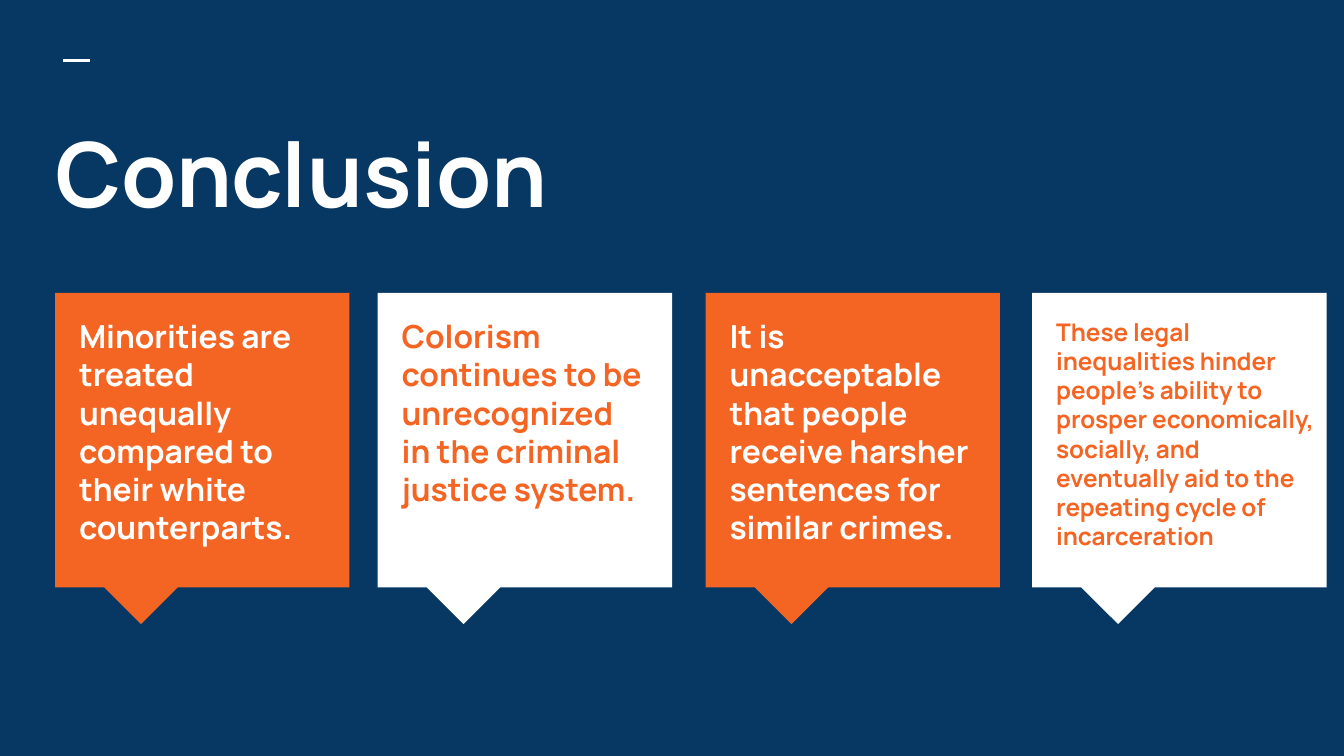
from dataclasses import dataclass

from lxml import etree
from pptx import Presentation
from pptx.dml.color import RGBColor
from pptx.enum.shapes import MSO_CONNECTOR, MSO_SHAPE
from pptx.enum.text import MSO_ANCHOR, MSO_AUTO_SIZE, PP_ALIGN
from pptx.oxml.ns import qn
from pptx.slide import Slide
from pptx.text.text import TextFrame
from pptx.util import Inches, Pt

STRAIGHT = MSO_CONNECTOR.STRAIGHT
CALLOUT = MSO_SHAPE.RECTANGULAR_CALLOUT
TOP = MSO_ANCHOR.TOP
LEFT = PP_ALIGN.LEFT
NO_AUTOFIT = MSO_AUTO_SIZE.NONE

NAVY = RGBColor(0x07, 0x37, 0x63)
ORANGE = RGBColor(0xF4, 0x65, 0x24)
WHITE = RGBColor(0xFF, 0xFF, 0xFF)

FONT = "Manrope"
PAGE_WIDTH = 10
PAGE_HEIGHT = PAGE_WIDTH * 9 / 16
CARD_TOP = 2.18
CARD_SIZE = 2.19
TEXT_OFFSET = 0.08
TEXT_TOP = 2.26
TEXT_HEIGHT = 1.95


@dataclass
class Card:
    left: float
    text: str
    fill: RGBColor
    color: RGBColor
    size: int = 17
    text_width: float = 2


CARDS = [
    Card(0.41, "Minorities are treated unequally compared to their white counterparts.",
         ORANGE, WHITE),
    Card(2.81, "Colorism continues to be unrecognized in the criminal justice system.",
         WHITE, ORANGE),
    Card(5.25, "It is unacceptable that people receive harsher sentences for similar crimes.",
         ORANGE, WHITE),
    Card(7.68, "These legal inequalities hinder people's ability to prosper economically, "
         "socially, and eventually aid to the repeating cycle of incarceration",
         WHITE, ORANGE, size=13, text_width=2.19),
]


def write_text(frame: TextFrame, text: str, size: int, color: RGBColor) -> None:
    frame.word_wrap = True
    frame.auto_size = NO_AUTOFIT
    frame.vertical_anchor = TOP
    frame.margin_left = frame.margin_right = Inches(0.1)
    frame.margin_top = frame.margin_bottom = Inches(0.1)
    para = frame.paragraphs[0]
    para.alignment = LEFT
    span = para.add_run()
    span.text = text
    span.font.name = FONT
    span.font.size = Pt(size)
    span.font.bold = True
    span.font.color.rgb = color


def add_accent(page: Slide) -> None:
    accent = page.shapes.add_connector(
        STRAIGHT, Inches(0.47), Inches(0.45), Inches(0.67), Inches(0.45))
    accent.line.color.rgb = WHITE
    accent.line.width = Pt(1.5)
    etree.SubElement(accent._element.spPr, qn("a:effectLst"))


def add_title(page: Slide) -> None:
    title = page.shapes.title
    title.left, title.top = Inches(0.31), Inches(0.78)
    title.width, title.height = Inches(9.43), Inches(1.12)
    write_text(title.text_frame, "Conclusion", 48, WHITE)


def add_card(page: Slide, card: Card) -> None:
    callout = page.shapes.add_shape(
        CALLOUT, Inches(card.left), Inches(CARD_TOP), Inches(CARD_SIZE), Inches(CARD_SIZE))
    callout.adjustments[0] = -0.208
    callout.adjustments[1] = 0.625
    callout.shadow.inherit = False
    callout.fill.solid()
    callout.fill.fore_color.rgb = card.fill
    callout.line.fill.background()

    box = page.shapes.add_textbox(
        Inches(card.left + TEXT_OFFSET), Inches(TEXT_TOP),
        Inches(card.text_width), Inches(TEXT_HEIGHT))
    write_text(box.text_frame, card.text, card.size, card.color)


def main() -> None:
    deck = Presentation()
    deck.slide_width = Inches(PAGE_WIDTH)
    deck.slide_height = Inches(PAGE_HEIGHT)

    # Title-only page on a navy background
    page = deck.slides.add_slide(deck.slide_layouts[5])
    page.background.fill.solid()
    page.background.fill.fore_color.rgb = NAVY

    # Heading
    add_accent(page)
    add_title(page)

    # Row of speech-bubble cards
    for card in CARDS:
        add_card(page, card)

    deck.save("out.pptx")


if __name__ == "__main__":
    main()
